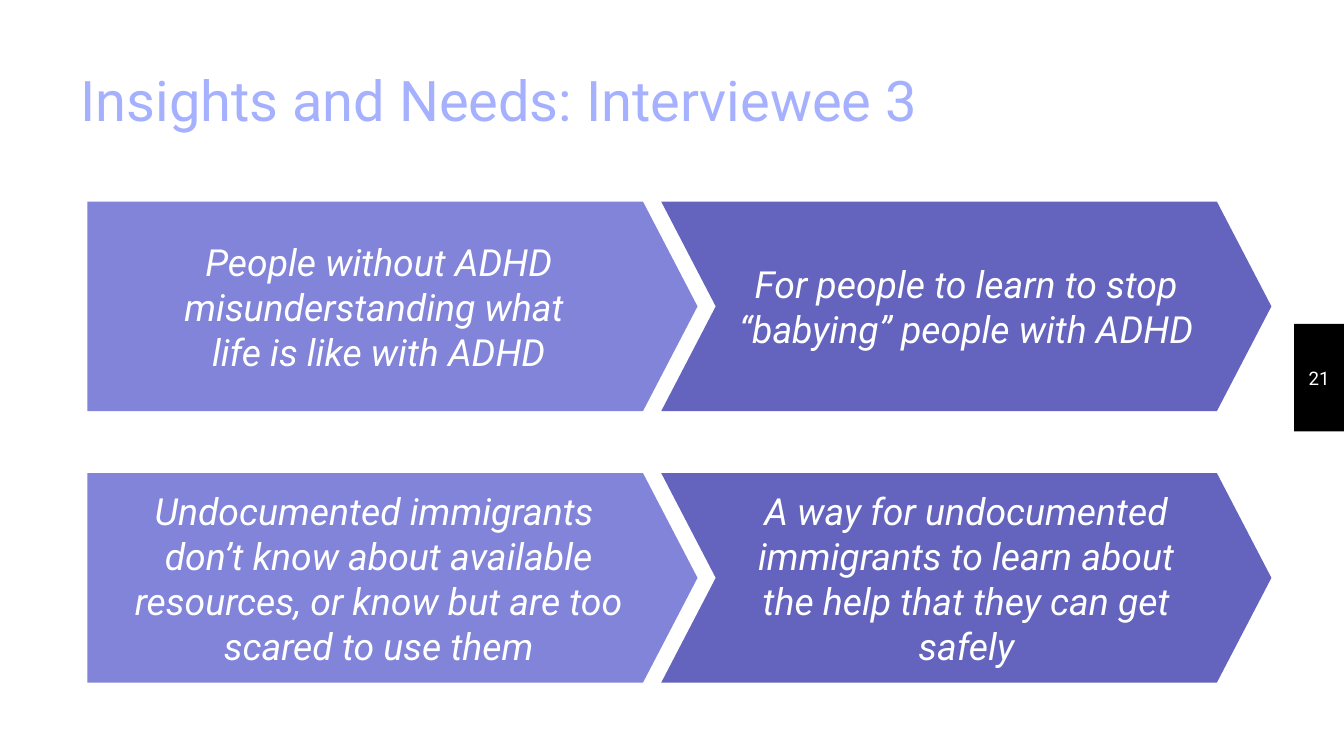
from pptx import Presentation
from pptx.dml.color import RGBColor
from pptx.enum.shapes import MSO_SHAPE
from pptx.enum.text import MSO_ANCHOR, PP_ALIGN
from pptx.util import Inches, Pt

RECTANGLE, PENTAGON, CHEVRON = MSO_SHAPE.RECTANGLE, MSO_SHAPE.PENTAGON, MSO_SHAPE.CHEVRON
LEFT, CENTER = PP_ALIGN.LEFT, PP_ALIGN.CENTER
MIDDLE, BOTTOM = MSO_ANCHOR.MIDDLE, MSO_ANCHOR.BOTTOM

TITLE = "Insights and Needs: Interviewee 3"
PAGE_NUMBER = "21"
COLUMNS = [(PENTAGON, "8184D9"), (CHEVRON, "6463BD")]
ROWS = [
    (
        ["People without ADHD misunderstanding what ", "life is like with ADHD"],
        ["For people to learn to stop “babying” people with ADHD"],
    ),
    (
        ["Undocumented immigrants ",
         "don’t know about available resources, or know but are too scared to use them"],
        ["A way for undocumented immigrants to learn about the help that they can get safely"],
    ),
]

FONT = "Roboto"
INSET = 0.1
SLIDE_WIDTH = 10
SLIDE_HEIGHT = SLIDE_WIDTH * 9 / 16
GRID_LEFT, GRID_TOP = 0.65, 1.5
COLUMN_STEP, ROW_STEP = 4.27, 2.02
ARROW_WIDTH, ARROW_HEIGHT, ARROW_POINT = 4.54, 1.56, 0.26


def color(value):
    return RGBColor.from_string(value)


def write(shape, lines, size=20, fill="FFFFFF", italic=False, align=CENTER,
          anchor=MIDDLE, bottom=INSET):
    frame = shape.text_frame
    frame.word_wrap = True
    frame.vertical_anchor = anchor
    frame.margin_left = frame.margin_right = frame.margin_top = Inches(INSET)
    frame.margin_bottom = Inches(bottom)
    for index, line in enumerate(lines):
        para = frame.add_paragraph() if index else frame.paragraphs[0]
        para.alignment = align
        span = para.add_run()
        span.text = line
        span.font.name = FONT
        span.font.size = Pt(size)
        span.font.italic = italic
        span.font.color.rgb = color(fill)


def add_box(page, kind, left, top, width, height, fill):
    box = page.shapes.add_shape(kind, *map(Inches, (left, top, width, height)))
    box.shadow.inherit = False
    box.fill.solid()
    box.fill.fore_color.rgb = color(fill)
    box.line.fill.background()
    return box


def main():
    deck = Presentation()
    deck.slide_width, deck.slide_height = Inches(SLIDE_WIDTH), Inches(SLIDE_HEIGHT)
    page = deck.slides.add_slide(deck.slide_layouts[5])

    title = page.shapes.title
    title.left, title.top, title.width, title.height = map(Inches, (0.5, 0.64, 7.49, 0.94))
    write(title, [TITLE], size=30, fill="A5B0FE", align=LEFT, anchor=BOTTOM, bottom=0.59)

    tab = add_box(page, RECTANGLE, 9.63, 2.41, 0.37, 0.8, "000000")
    write(tab, [PAGE_NUMBER], size=10)

    for row, cells in enumerate(ROWS):
        for column, ((kind, fill), lines) in enumerate(zip(COLUMNS, cells)):
            arrow = add_box(page, kind, GRID_LEFT + column * COLUMN_STEP,
                            GRID_TOP + row * ROW_STEP, ARROW_WIDTH, ARROW_HEIGHT, fill)
            arrow.adjustments[0] = ARROW_POINT
            write(arrow, lines, italic=True)

    deck.save("out.pptx")


if __name__ == "__main__":
    main()
